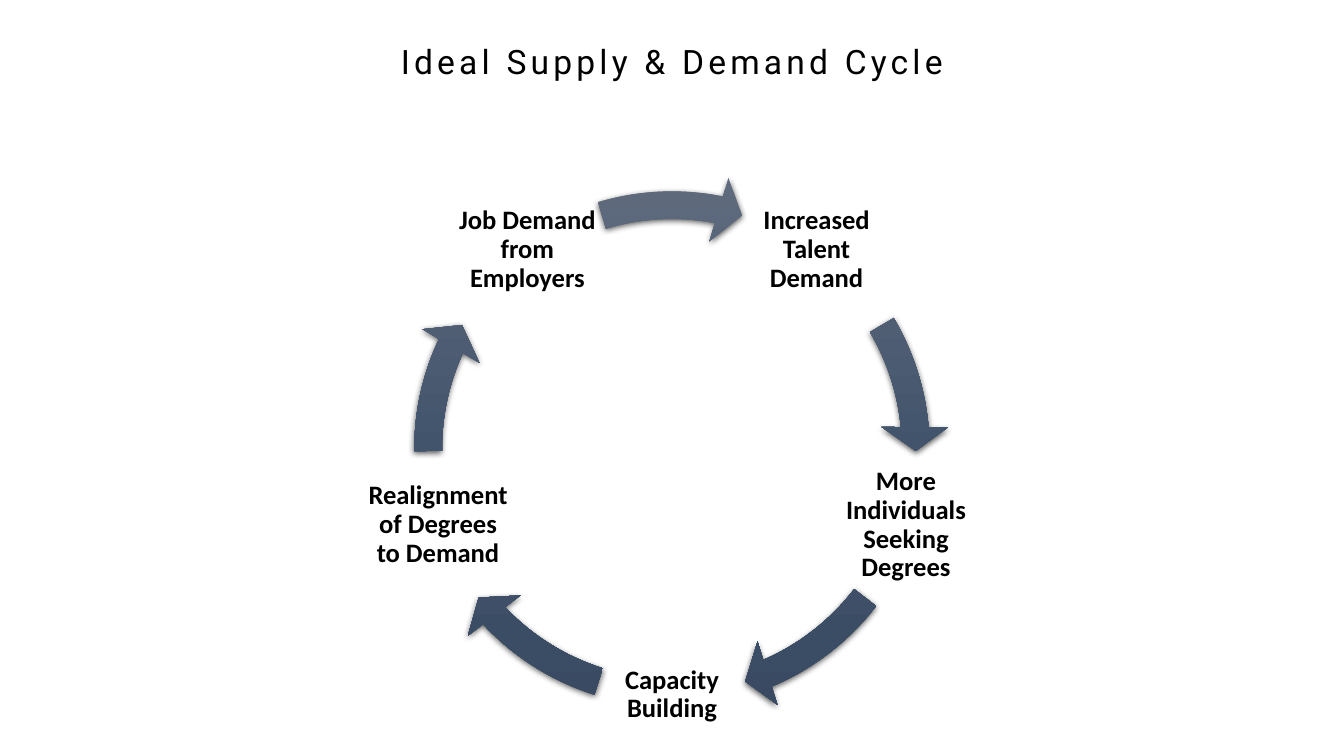
from math import cos, radians, sin

from lxml.etree import SubElement
from pptx import Presentation
from pptx.dml.color import RGBColor
from pptx.enum.shapes import MSO_SHAPE as Shape
from pptx.enum.text import MSO_ANCHOR as Anchor, PP_ALIGN as Align
from pptx.oxml import parse_xml
from pptx.oxml.ns import nsdecls, qn
from pptx.util import Emu, Pt

TITLE = "Ideal Supply & Demand Cycle"
STEPS = [
    {"label": "Increased Talent Demand", "start": 329.44, "end": 354.88},
    {"label": "More Individuals Seeking Degrees", "start": 37.56, "end": 66.91},
    {"label": "Capacity Building", "start": 107.5, "end": 136.84},
    {"label": "Realignment of Degrees to Demand", "start": 179.52, "end": 204.96},
    {"label": "Job Demand from Employers", "start": 253.31, "end": 281.09},
]
THEME = {
    "text": "000000",
    "shadow": "000000",
    "gradient": [(0, "606B7D"), (50, "42546C"), (100, "394A62")],
    "title": {"font": "Roboto", "size": 24},
    "label": {"font": "Calibri", "size": 19, "bold": True},
}
SLIDE = (1344, 756)
TITLE_BOX = (0, 36, 1344, 50)
CENTER = (672, 449)
RADIUS = 246
LABEL_SIDE = 148
RING_SIDE = 554
FIRST_ANGLE = -54
ARROW_WIDTH, HEAD_ANGLE, HEAD_WIDTH = 0.05, 5.6, 0.06


def px(value):
    return Emu(round(value * 914400 / 100.8))


def square(x, y, side):
    return x - side / 2, y - side / 2, side, side


def add_text(shapes, text, place, font, size, bold=False, spacing=None,
             inset=None, anchor=Anchor.TOP, line=None):
    box = shapes.add_textbox(*map(px, place))
    frame = box.text_frame
    frame.word_wrap = True
    frame.vertical_anchor = anchor
    if inset is not None:
        frame.margin_left = frame.margin_right = px(inset)
        frame.margin_top = frame.margin_bottom = px(inset)
    para = frame.paragraphs[0]
    para.alignment = Align.CENTER
    para.line_spacing = line
    span = para.add_run()
    span.text = text
    span.font.name = font
    span.font.size = Pt(size)
    span.font.bold = bold
    span.font.color.rgb = RGBColor.from_string(THEME["text"])
    if spacing:
        span.font._element.set("spc", str(spacing * 100))


def add_arrow(shapes, start, end):
    arrow = shapes.add_shape(Shape.CIRCULAR_ARROW, *map(px, square(*CENTER, RING_SIDE)))
    angles = [angle * 0.6 for angle in (HEAD_ANGLE, end, start)]
    for index, value in enumerate([ARROW_WIDTH, *angles, HEAD_WIDTH]):
        arrow.adjustments[index] = value
    arrow.line.fill.background()
    arrow.fill.gradient()
    gradient = arrow._element.spPr.find(qn("a:gradFill"))
    stops = gradient.find(qn("a:gsLst"))
    for stop in list(stops):
        stops.remove(stop)
    for position, color in THEME["gradient"]:
        stop = SubElement(stops, qn("a:gs"), pos=str(position * 1000))
        SubElement(stop, qn("a:srgbClr"), val=color)
    gradient.find(qn("a:lin")).set("ang", "5400000")
    arrow._element.spPr.append(parse_xml(
        f'<a:effectLst {nsdecls("a")}><a:outerShdw blurRad="{Pt(4.5)}" dist="{Pt(1.5)}" '
        f'dir="5400000" rotWithShape="0"><a:srgbClr val="{THEME["shadow"]}">'
        '<a:alpha val="63000"/></a:srgbClr></a:outerShdw></a:effectLst>'))


def main():
    deck = Presentation()
    deck.slide_width, deck.slide_height = map(px, SLIDE)
    page = deck.slides.add_slide(deck.slide_layouts[6])
    add_text(page.shapes, TITLE, TITLE_BOX, spacing=3, **THEME["title"])
    cycle = page.shapes.add_group_shape()
    for index, step in enumerate(STEPS):
        angle = radians(FIRST_ANGLE + index * 360 / len(STEPS))
        x = CENTER[0] + RADIUS * cos(angle)
        y = CENTER[1] + RADIUS * sin(angle)
        add_text(cycle.shapes, step["label"], square(x, y, LABEL_SIDE), inset=3,
                 anchor=Anchor.MIDDLE, line=0.9, **THEME["label"])
        add_arrow(cycle.shapes, step["start"], step["end"])
    deck.save("out.pptx")


if __name__ == "__main__":
    main()
